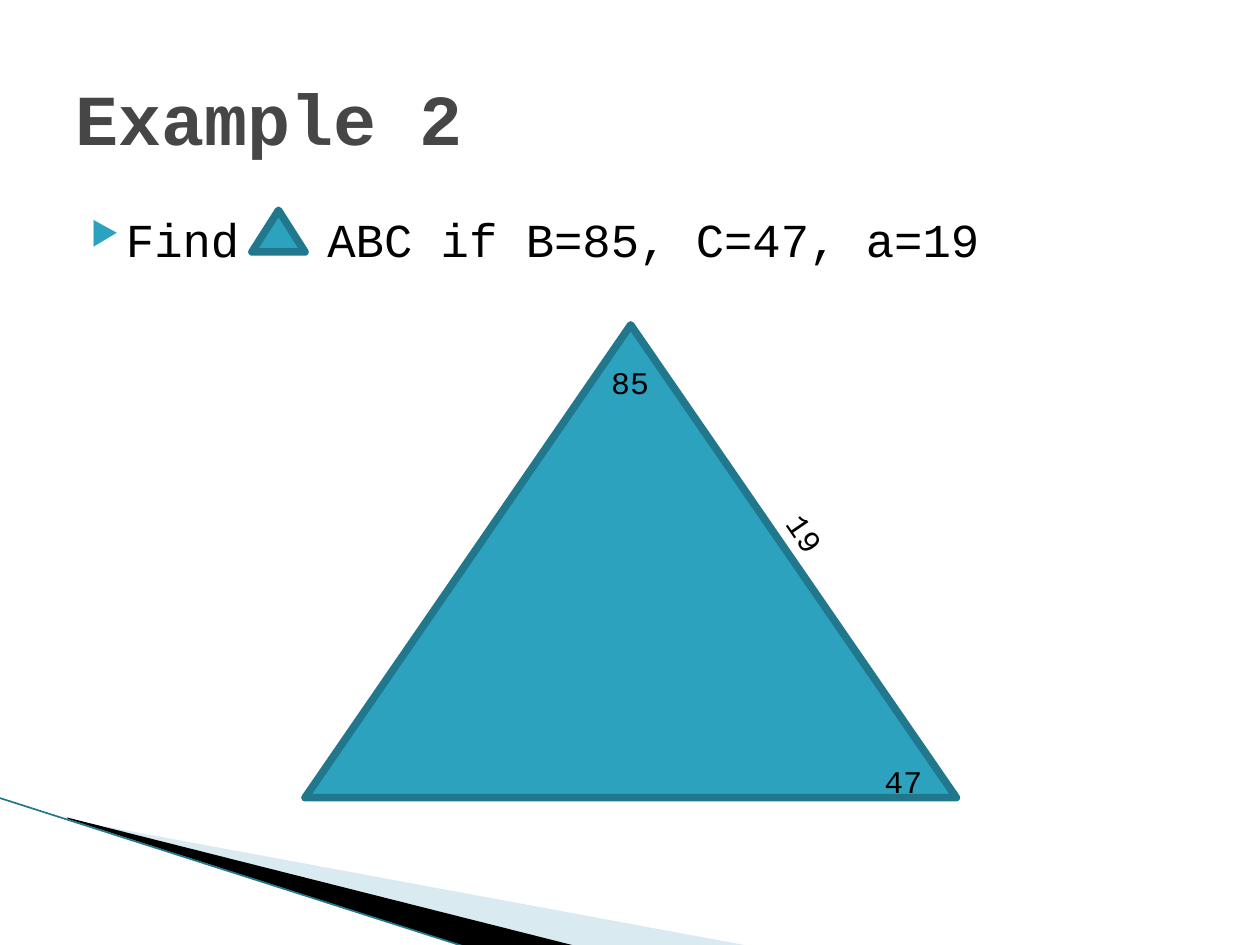
from typing import NamedTuple

import lxml.etree
import pptx
import pptx.dml.color
import pptx.enum.shapes
import pptx.enum.text
import pptx.oxml.ns
import pptx.util

Cm = pptx.util.Cm
FONT = "Courier New"
COLORS = {
    "accent": "2DA2BF",
    "outline": "21788D",
    "pale": "A0CBDC",
    "black": "000000",
    "title": "464646",
}


class Box(NamedTuple):
    left: float
    top: float
    width: float
    height: float


class Label(NamedTuple):
    text: str
    box: Box
    rotation: float = 0


class Wedge(NamedTuple):
    points: list[tuple[float, float]]
    color: str
    opacity: int = 100


WEDGES = [
    Wedge([(1.4, 16.53), (15.11, 19.07), (11.58, 19.07), (1.4, 16.51)], "pale", 40),
    Wedge([(1.35, 16.48), (11.61, 19.07), (9.45, 19.1), (1.37, 16.51)], "black"),
]
LABELS = [
    Label("85", Box(12.07, 7.19, 1.9, 1.02)),
    Label("47", Box(17.58, 15.24, 1.47, 1.02)),
    Label("19", Box(15.42, 10.59, 2.11, 1.02), 55.7),
]


def rgb(name: str) -> pptx.dml.color.RGBColor:
    return pptx.dml.color.RGBColor.from_string(COLORS[name])


def add_child(parent, tag: str, **attributes: str):
    return lxml.etree.SubElement(parent, pptx.oxml.ns.qn(tag), attributes)


def add_text(shapes, text: str, box: Box, *, size: float, color: str = "black",
             bold: bool = False, bullet: bool = False, rotation: float = 0,
             anchor=pptx.enum.text.MSO_ANCHOR.TOP) -> None:
    shape = shapes.add_textbox(*map(Cm, box))
    shape.rotation = rotation
    frame = shape.text_frame
    frame.word_wrap = True
    frame.vertical_anchor = anchor
    paragraph = frame.paragraphs[0]
    if bullet:
        properties = paragraph._p.get_or_add_pPr()
        properties.set("marL", str(Cm(1.02)))
        properties.set("indent", str(Cm(-0.71)))
        bullet_color = add_child(properties, "a:buClr")
        add_child(bullet_color, "a:srgbClr", val=COLORS["accent"])
        add_child(properties, "a:buSzPct", val="68000")
        add_child(properties, "a:buChar", char="▶")
    run = paragraph.add_run()
    run.text = text
    run.font.name = FONT
    run.font.size = pptx.util.Pt(size)
    run.font.bold = bold
    run.font.color.rgb = rgb(color)


def add_triangle(shapes, box: Box) -> None:
    kind = pptx.enum.shapes.MSO_SHAPE.ISOSCELES_TRIANGLE
    triangle = shapes.add_shape(kind, *map(Cm, box))
    triangle.shadow.inherit = False
    triangle.fill.solid()
    triangle.fill.fore_color.rgb = rgb("accent")
    triangle.line.color.rgb = rgb("outline")
    triangle.line.width = pptx.util.Pt(4.33)
    add_child(triangle.line._get_or_add_ln(), "a:round")


def add_wedge(shapes, wedge: Wedge) -> None:
    start, *others = [(Cm(x), Cm(y)) for x, y in wedge.points]
    builder = shapes.build_freeform(*start)
    builder.add_line_segments(others, close=True)
    shape = builder.convert_to_shape()
    shape.shadow.inherit = False
    shape.fill.solid()
    shape.fill.fore_color.rgb = rgb(wedge.color)
    shape.line.fill.background()
    if wedge.opacity < 100:
        color = shape._element.spPr.find(".//" + pptx.oxml.ns.qn("a:srgbClr"))
        add_child(color, "a:alpha", val=str(wedge.opacity * 1000))


def add_edge(shapes) -> None:
    straight = pptx.enum.shapes.MSO_CONNECTOR.STRAIGHT
    edge = shapes.add_connector(straight, Cm(-0.03), Cm(16.08), Cm(9.42), Cm(19.1))
    edge.line.color.rgb = rgb("outline")
    edge.line.width = pptx.util.Pt(0.95)
    add_child(edge._element.spPr, "a:effectLst")


def main() -> None:
    presentation = pptx.Presentation()
    presentation.slide_width = Cm(25.4)
    presentation.slide_height = Cm(19.05)
    slide = presentation.slides.add_slide(presentation.slide_layouts[6])
    shapes = slide.shapes

    for wedge in WEDGES:
        add_wedge(shapes, wedge)
    add_edge(shapes)

    add_text(shapes, "Find \tABC if B=85, C=47, a=19", Box(1.27, 4.11, 22.86, 12.57),
             size=27, bullet=True)
    add_text(shapes, "Example 2", Box(1.27, 0.76, 22.86, 3.18), size=41, color="title",
             bold=True, anchor=pptx.enum.text.MSO_ANCHOR.MIDDLE)
    add_triangle(shapes, Box(5.08, 4.24, 1.07, 0.84))

    figure = shapes.add_group_shape()
    add_triangle(figure.shapes, Box(6.15, 6.55, 13.13, 9.53))
    for label in LABELS:
        add_text(figure.shapes, label.text, label.box, size=18, rotation=label.rotation)

    presentation.save("out.pptx")


if __name__ == "__main__":
    main()
